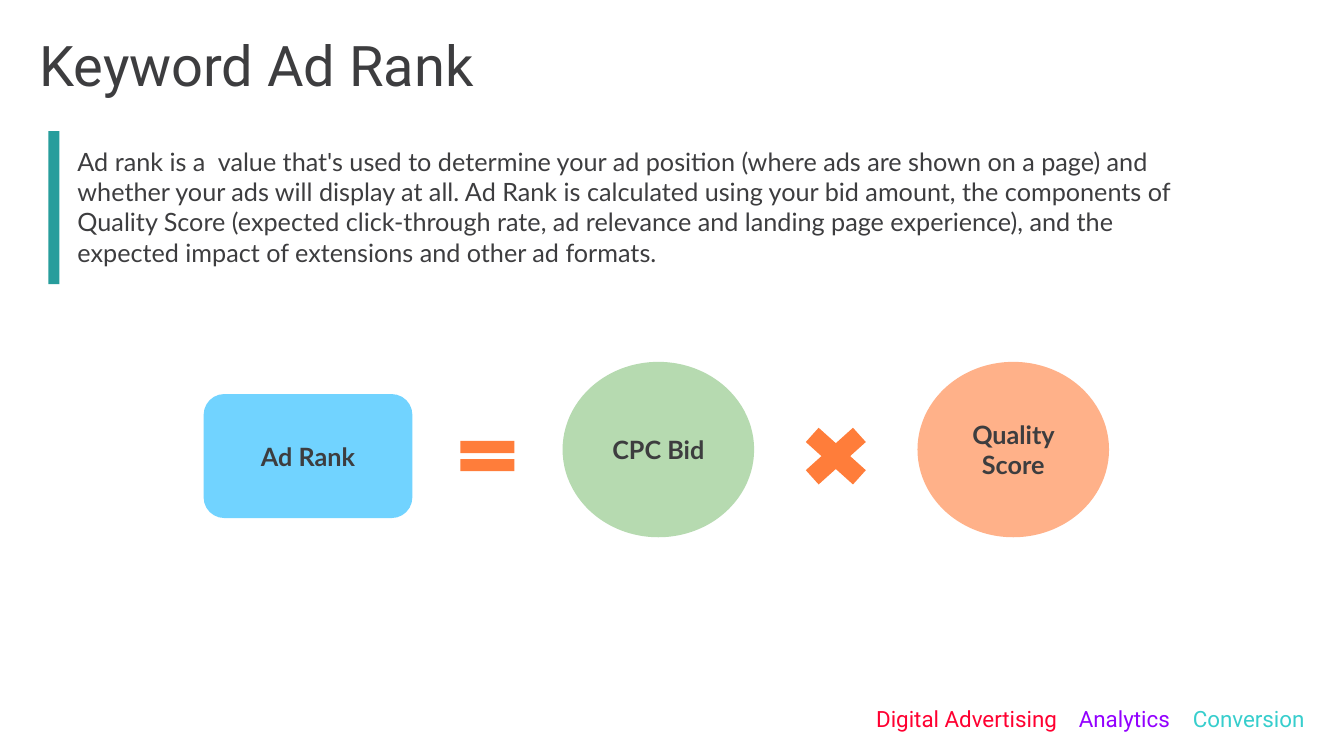
import pptx
import pptx.util
import pptx.dml.color
import pptx.enum.shapes
import pptx.enum.text
import pptx.oxml
import pptx.oxml.ns

Inches = pptx.util.Inches
SHAPE = pptx.enum.shapes.MSO_SHAPE
ALIGN = pptx.enum.text.PP_ALIGN
ANCHOR = pptx.enum.text.MSO_ANCHOR
INK = "3D3D3F"
ORANGE = "FF7D3A"


def color(value):
    return pptx.dml.color.RGBColor.from_string(value)


def write(frame, text, size=18, font="Lato", ink=INK, bold=False, align=ALIGN.LEFT,
          anchor=ANCHOR.TOP, spacing=None, margins=None, tabs=()):
    frame.word_wrap = True
    frame.vertical_anchor = anchor
    if margins is not None:
        frame.margin_left = frame.margin_right = Inches(margins)
        frame.margin_top = frame.margin_bottom = Inches(margins)
    paragraph = frame.paragraphs[0]
    paragraph.alignment = align
    if spacing:
        paragraph.line_spacing = spacing
    if tabs:
        stops = "".join(f'<a:tab pos="{Inches(stop)}" algn="l"/>' for stop in tabs)
        paragraph._p.get_or_add_pPr().append(pptx.oxml.parse_xml(
            f'<a:tabLst {pptx.oxml.ns.nsdecls("a")}>{stops}</a:tabLst>'))
    pieces = [(text, ink)] if isinstance(text, str) else text
    for wording, piece_ink in pieces:
        run = paragraph.add_run()
        run.text = wording
        run.font.size = pptx.util.Pt(size)
        run.font.name = font
        run.font.bold = bold
        run.font.color.rgb = color(piece_ink)


def add_text(slide, box, text, **formatting):
    area = slide.shapes.add_textbox(*map(Inches, box))
    write(area.text_frame, text, **formatting)


def add_block(slide, preset, box, fill, label=None):
    block = slide.shapes.add_shape(preset, *map(Inches, box))
    block.shadow.inherit = False
    block.fill.solid()
    block.fill.fore_color.rgb = color(fill)
    block.line.fill.background()
    if label:
        write(block.text_frame, label, bold=True, align=ALIGN.CENTER, anchor=ANCHOR.MIDDLE)


def add_footer(slide, box):
    topics = [("\tDigital Advertising", "FF0031"), ("\tAnalytics", "9300FF"),
              ("\tConversion", "37CECD")]
    add_text(slide, box, topics, size=16, font="Roboto", anchor=ANCHOR.BOTTOM,
             spacing=0.95, margins=0, tabs=(4.31, 6.32, 7.45))


def add_title(slide, box):
    add_text(slide, box, "Keyword Ad Rank", size=40, font="Roboto", spacing=0.88, margins=0)


def add_definition(slide, box):
    left, top, width, height = box
    definition = (
        "Ad rank is a  value that's used to determine your ad position (where ads are shown "
        "on a page) and whether your ads will display at all. Ad Rank is calculated using your "
        "bid amount, the components of Quality Score (expected click-through rate, ad relevance "
        "and landing page experience), and the expected impact of extensions and other ad formats.")
    add_text(slide, (left + 0.19, top + 0.1, width - 0.19, height - 0.21), definition)
    add_block(slide, SHAPE.RECTANGLE, (left, top, 0.11, height), "279D9C")


def add_formula(slide, box):
    left, top, width, height = box
    factor_width = 1.9
    factor_middle = top + height / 2
    rank_middle = factor_middle + 0.065
    terms = [
        (SHAPE.ROUNDED_RECTANGLE, 0, 2.07, 1.23, rank_middle, "71D3FF", "Ad Rank"),
        (SHAPE.MATH_EQUAL, 2.45, 0.73, 0.51, rank_middle, ORANGE, None),
        (SHAPE.OVAL, 3.56, factor_width, height, factor_middle, "B6DAB0", "CPC Bid"),
        (SHAPE.MATH_MULTIPLY, 5.82, 0.9, 0.81, rank_middle, ORANGE, None),
        (SHAPE.OVAL, width - factor_width, factor_width, height, factor_middle,
         "FFB189", "Quality Score"),
    ]
    for preset, offset, term_width, term_height, middle, fill, label in terms:
        term_box = (left + offset, middle - term_height / 2, term_width, term_height)
        add_block(slide, preset, term_box, fill, label)


def main():
    deck = pptx.Presentation()
    deck.slide_width = Inches(13.33)
    deck.slide_height = Inches(7.5)
    slide = deck.slides.add_slide(deck.slide_layouts[6])
    add_footer(slide, (4.38, 7.01, 8.65, 0.26))
    add_title(slide, (0.39, 0.39, 12.55, 0.61))
    add_definition(slide, (0.48, 1.3, 11.51, 1.52))
    add_formula(slide, (2.02, 3.59, 8.98, 1.74))
    deck.save("out.pptx")


if __name__ == "__main__":
    main()
